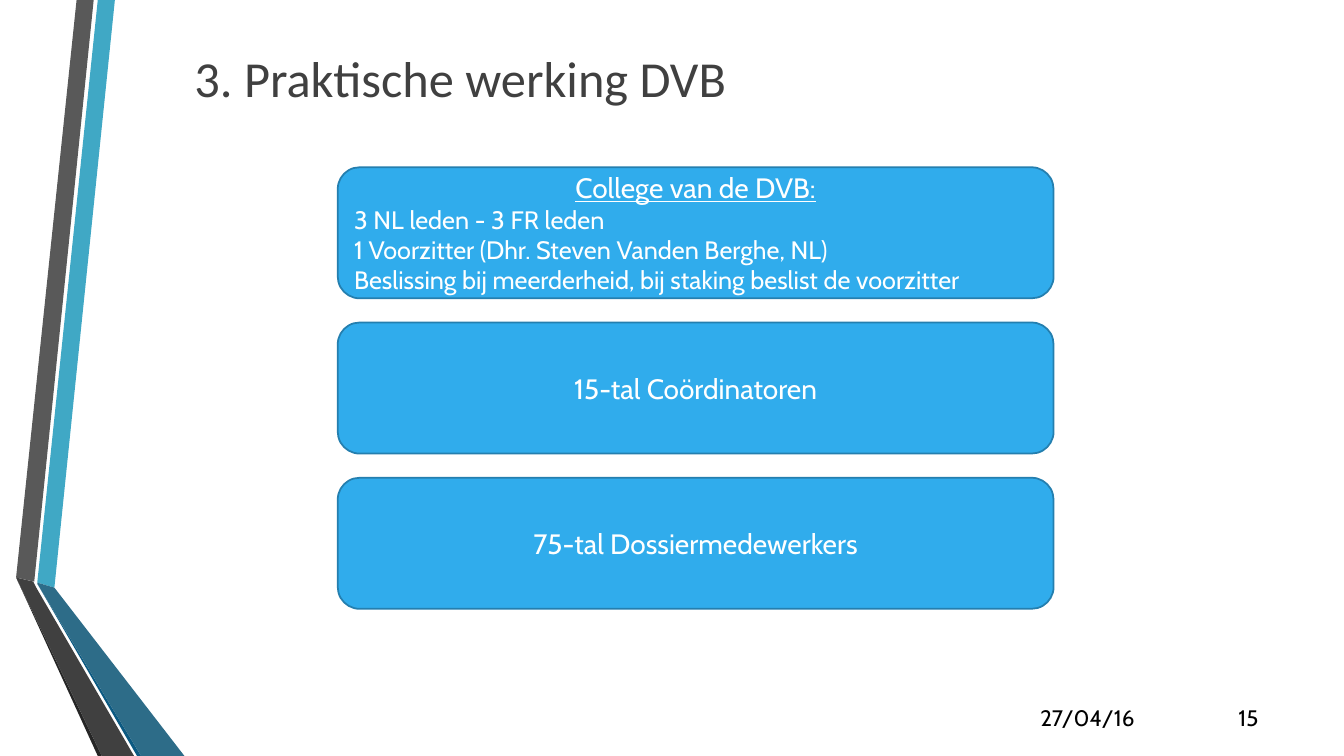
from pptx import Presentation
from pptx.dml.color import RGBColor
from pptx.enum.shapes import MSO_SHAPE as SHAPE
from pptx.enum.text import MSO_ANCHOR as ANCHOR, PP_ALIGN as ALIGN
from pptx.util import Pt

PX = 9144
WHITE = RGBColor(0xFF, 0xFF, 0xFF)
BLACK = RGBColor(0, 0, 0)
DARK = RGBColor(0x40, 0x40, 0x40)
BOX_FILL = RGBColor(0x30, 0xAC, 0xEC)
BOX_LINE = RGBColor(0x24, 0x7F, 0xAF)

RIBBONS = [
    (RGBColor(0x40, 0xA8, 0xC5), [(21, 578), (38, 583), (98, 0), (81, 0)]),
    (RGBColor(0x59, 0x59, 0x59), [(77, 0), (60, 0), (0, 573), (18, 577)]),
    (RGBColor(0x26, 0x26, 0x26), [(0, 573), (81, 750), (85, 750)]),
    (RGBColor(0x0C, 0x5A, 0x82), [(21, 579), (120, 750), (124, 750)]),
    (RGBColor(0x2D, 0x6C, 0x88),
     [(21, 579), (124, 750), (167, 750), (38, 583), (21, 578)]),
    (DARK, [(117, 750), (20, 583), (17, 577), (0, 573), (85, 750)]),
]

LEVELS = [
    ["College van de DVB:",
     "3 NL leden - 3 FR leden",
     "1 Voorzitter (Dhr. Steven Vanden Berghe, NL)",
     "Beslissing bij meerderheid, bij staking beslist de voorzitter"],
    ["15-tal Coördinatoren"],
    ["75-tal Dossiermedewerkers"],
]


def emu(*lengths):
    return [n * PX for n in lengths]


def format_paragraph(p, size, font, color, align):
    p.alignment = align
    for r in p.runs:
        r.font.size = Pt(size)
        r.font.name = font
        r.font.color.rgb = color


def add_ribbons(s, left, top):
    for color, points in RIBBONS:
        (x, y), *rest = [(left + x, top + y) for x, y in points]
        builder = s.shapes.build_freeform(x, y, scale=PX)
        builder.add_line_segments(rest, close=True)
        sp = builder.convert_to_shape()
        sp.shadow.inherit = False
        sp.fill.solid()
        sp.fill.fore_color.rgb = color
        sp.line.fill.background()


def add_label(s, box, text, size, font, color, align, anchor):
    tf = s.shapes.add_textbox(*emu(*box)).text_frame
    tf.word_wrap = True
    tf.vertical_anchor = anchor
    tf.text = text
    format_paragraph(tf.paragraphs[0], size, font, color, align)


def add_level(s, box, lines):
    sp = s.shapes.add_shape(SHAPE.ROUNDED_RECTANGLE, *emu(*box))
    sp.shadow.inherit = False
    sp.fill.solid()
    sp.fill.fore_color.rgb = BOX_FILL
    sp.line.color.rgb = BOX_LINE
    sp.line.width = Pt(1.25)
    tf = sp.text_frame
    tf.word_wrap = True
    tf.vertical_anchor = ANCHOR.MIDDLE
    tf.text = "\n".join(lines)
    heading, *details = tf.paragraphs
    format_paragraph(heading, 20, "Cabin", WHITE, ALIGN.CENTER)
    if details:
        heading.runs[0].font.underline = True
    for p in details:
        format_paragraph(p, 18, "Cabin", WHITE, ALIGN.LEFT)


def add_levels(s, left, top, width, height, gap):
    for i, lines in enumerate(LEVELS):
        add_level(s, (left, top + i * (height + gap), width, height), lines)


def add_footer(s, top, height):
    add_label(s, (1016, top, 125, height), "27/04/16", 16, "Cabin", BLACK,
              ALIGN.CENTER, ANCHOR.BOTTOM)
    add_label(s, (1198, top, 60, height), "15", 16, "Cabin", BLACK,
              ALIGN.RIGHT, ANCHOR.BOTTOM)


def main():
    prs = Presentation()
    prs.slide_width, prs.slide_height = emu(1333, 750)
    s = prs.slides.add_slide(prs.slide_layouts[6])
    add_ribbons(s, 16, 0)
    add_label(s, (183, 39, 1075, 75), "3. Praktische werking DVB", 36,
              "Calibri", DARK, ALIGN.LEFT, ANCHOR.MIDDLE)
    add_footer(s, 690, 40)
    add_levels(s, 335, 166, 710, 130, 24)
    prs.save("out.pptx")


if __name__ == "__main__":
    main()
